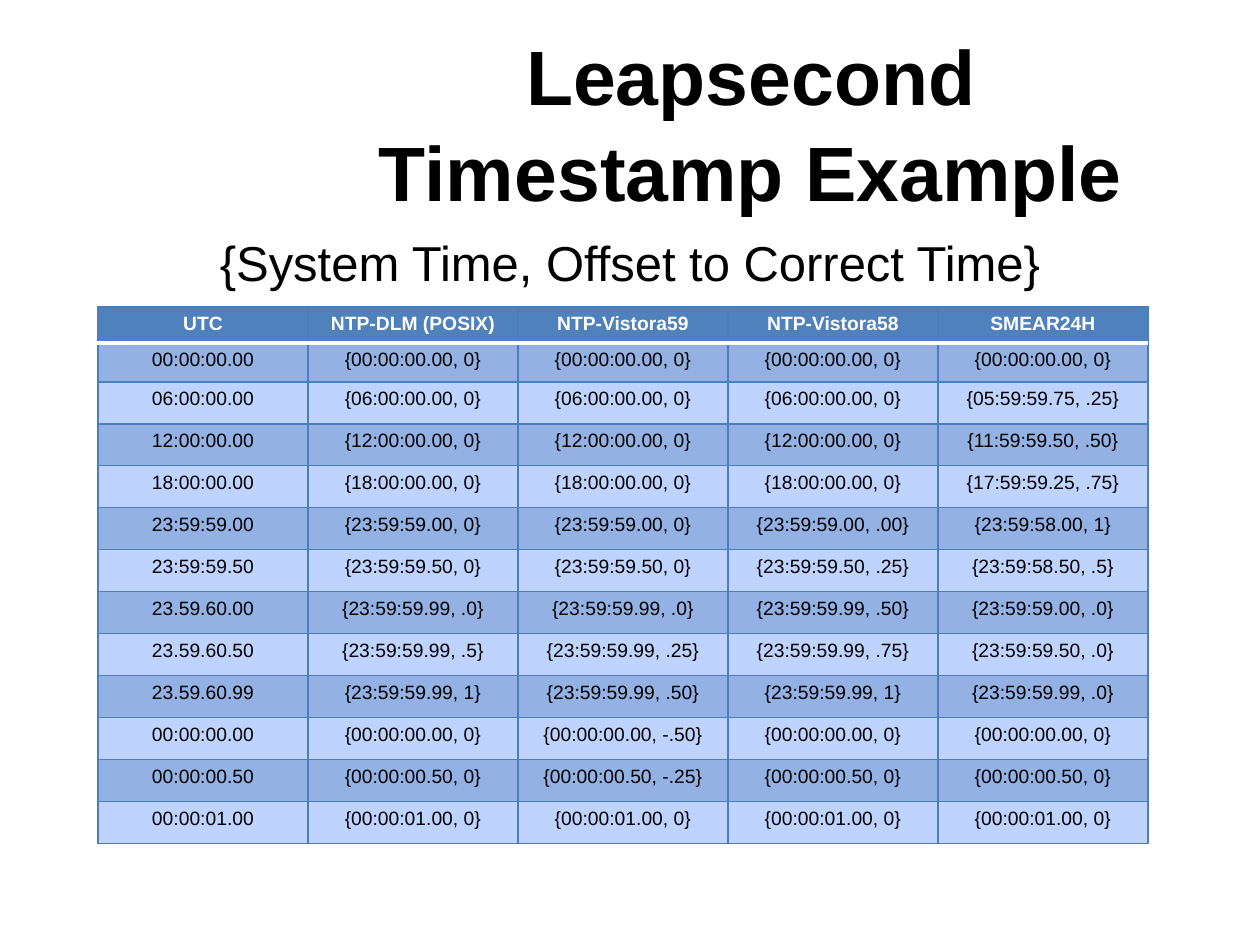
from lxml import etree
from pptx import Presentation
from pptx.dml.color import RGBColor
from pptx.enum.text import MSO_ANCHOR, PP_ALIGN
from pptx.oxml.ns import qn
from pptx.util import Emu, Pt

CENTER = PP_ALIGN.CENTER
TOP, MIDDLE = MSO_ANCHOR.TOP, MSO_ANCHOR.MIDDLE
EMU_PER_PX = 914400 / 126

HEADER = ["UTC", "NTP-DLM (POSIX)", "NTP-Vistora59", "NTP-Vistora58", "SMEAR24H"]
ROWS = [
    ["00:00:00.00"] + ["{00:00:00.00, 0}"] * 4,
    ["06:00:00.00"] + ["{06:00:00.00, 0}"] * 3 + ["{05:59:59.75, .25}"],
    ["12:00:00.00"] + ["{12:00:00.00, 0}"] * 3 + ["{11:59:59.50, .50}"],
    ["18:00:00.00"] + ["{18:00:00.00, 0}"] * 3 + ["{17:59:59.25, .75}"],
    ["23:59:59.00", "{23:59:59.00, 0}", "{23:59:59.00, 0}", "{23:59:59.00, .00}", "{23:59:58.00, 1}"],
    ["23:59:59.50", "{23:59:59.50, 0}", "{23:59:59.50, 0}", "{23:59:59.50, .25}", "{23:59:58.50, .5}"],
    ["23.59.60.00", "{23:59:59.99, .0}", "{23:59:59.99, .0}", "{23:59:59.99, .50}", "{23:59:59.00, .0}"],
    ["23.59.60.50", "{23:59:59.99, .5}", "{23:59:59.99, .25}", "{23:59:59.99, .75}", "{23:59:59.50, .0}"],
    ["23.59.60.99", "{23:59:59.99, 1}", "{23:59:59.99, .50}", "{23:59:59.99, 1}", "{23:59:59.99, .0}"],
    ["00:00:00.00", "{00:00:00.00, 0}", "{00:00:00.00, -.50}", "{00:00:00.00, 0}", "{00:00:00.00, 0}"],
    ["00:00:00.50", "{00:00:00.50, 0}", "{00:00:00.50, -.25}", "{00:00:00.50, 0}", "{00:00:00.50, 0}"],
    ["00:00:01.00"] + ["{00:00:01.00, 0}"] * 4,
]
ROW_HEIGHTS = [36, 39] + [42] * 11


def px(n):
    return Emu(round(n * EMU_PER_PX))


def rgb(value):
    return RGBColor.from_string(value)


def write(tf, text, size=11, color="000000", bold=False, font="Arial", spacing=None):
    p = tf.paragraphs[0]
    p.alignment = CENTER
    if spacing:
        p.line_spacing = spacing
    r = p.add_run()
    r.text = text
    r.font.name = font
    r.font.size = Pt(size)
    r.font.bold = bold
    r.font.color.rgb = rgb(color)


class SlideBuilder:
    head, band, plain = "4F81BD", "93B2E3", "BFD3FF"
    grid, rule = "4B7EBC", "FFFFFF"

    def __init__(self, slide):
        self.slide = slide

    def text(self, x, y, w, h, text, anchor=TOP, inset=6, **style):
        tf = self.slide.shapes.add_textbox(px(x), px(y), px(w), px(h)).text_frame
        tf.word_wrap = True
        tf.vertical_anchor = anchor
        tf.margin_top = px(inset)
        write(tf, text, **style)

    def border(self, cell, side, color, width):
        ln = etree.SubElement(cell._tc.get_or_add_tcPr(), qn(f"a:ln{side}"), w=str(Pt(width)))
        fill = etree.SubElement(ln, qn("a:solidFill"))
        etree.SubElement(fill, qn("a:srgbClr"), val=color)

    def cell(self, cell, text, row):
        is_head = row == 0
        write(cell.text_frame, text, color="FFFFFF" if is_head else "000000", bold=is_head)
        for side in "LRTB":
            # The white rule is shared by the header and the first body row
            on_rule = (row, side) in ((0, "B"), (1, "T"))
            self.border(cell, side, *((self.rule, 2) if on_rule else (self.grid, 0.75)))
        cell.fill.solid()
        cell.fill.fore_color.rgb = rgb(self.head if is_head else self.band if row % 2 else self.plain)

    def table(self, x, y, col_width, heights, rows):
        cols = len(rows[0])
        table = self.slide.shapes.add_table(
            len(rows), cols, px(x), px(y), px(col_width * cols), px(sum(heights))).table
        for column in table.columns:
            column.width = px(col_width)
        for i, (values, height) in enumerate(zip(rows, heights)):
            table.rows[i].height = px(height)
            for j, value in enumerate(values):
                self.cell(table.cell(i, j), value, i)


def main():
    prs = Presentation()
    prs.slide_width, prs.slide_height = px(1260), px(945)
    s = SlideBuilder(prs.slides.add_slide(prs.slide_layouts[6]))

    # Title and subtitle
    s.text(305, 38, 892, 157, "Leapsecond Timestamp Example", anchor=MIDDLE, inset=14,
           size=44, bold=True, spacing=1.04)
    s.text(63, 221, 1134, 624, "{System Time, Offset to Correct Time}", inset=11, size=28)

    # Timestamp table
    s.table(98, 307, 210, ROW_HEIGHTS, [HEADER] + ROWS)

    prs.save("out.pptx")


if __name__ == "__main__":
    main()
